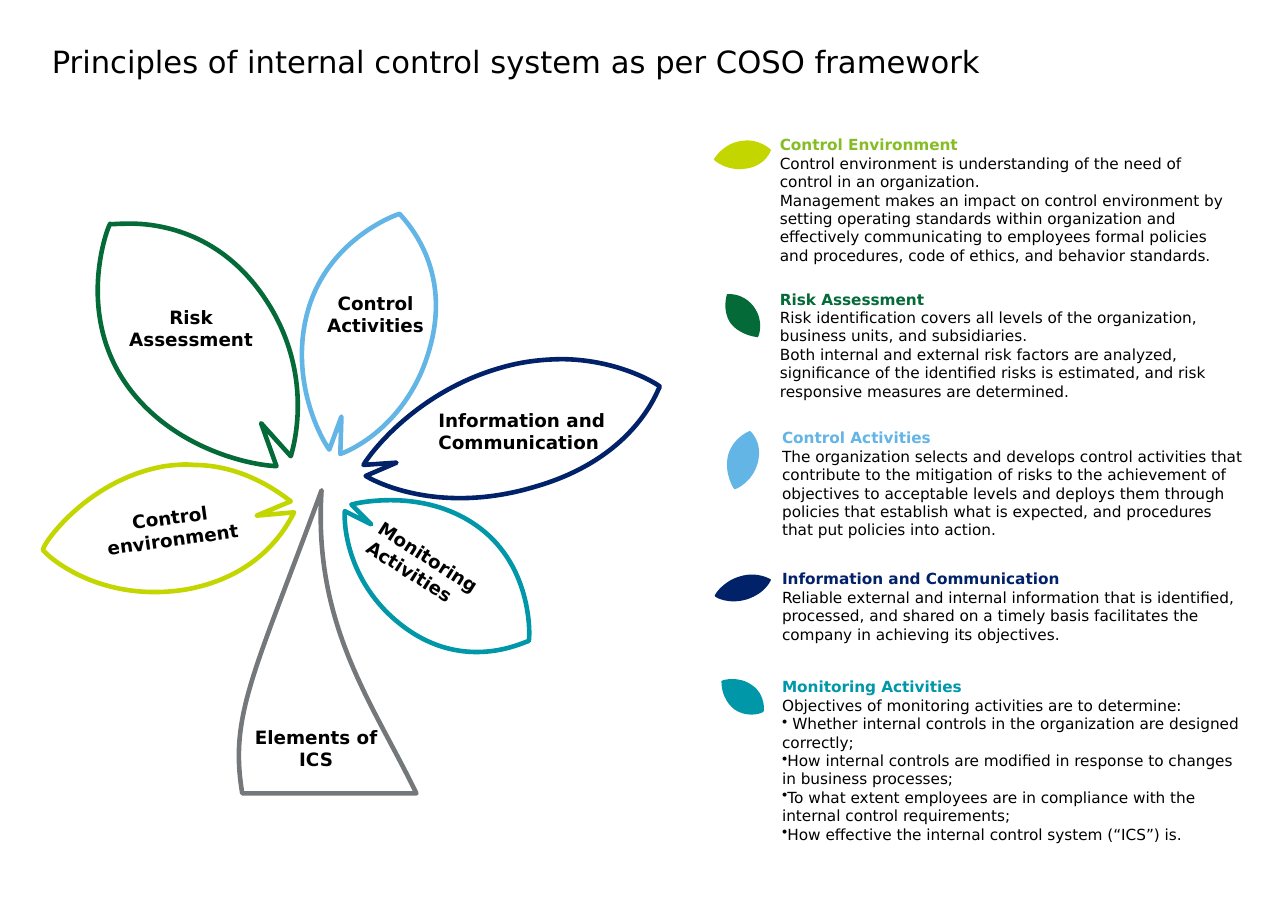
from math import cos, radians, sin

from lxml.etree import SubElement
from pptx import Presentation
from pptx.dml.color import RGBColor
from pptx.enum.text import MSO_ANCHOR, MSO_AUTO_SIZE, PP_ALIGN
from pptx.oxml.ns import qn
from pptx.util import Cm, Pt

FONT = "DejaVu Sans"
BLACK, GREY = "000000", "75787B"
LIME, GREEN, SKY, NAVY, TEAL = "C4D600", "046A38", "62B5E5", "012169", "0097A9"
TITLE = "Principles of internal control system as per COSO framework"

# Places are in inches: left, top, width, height.
# Heading, heading colour, place, paragraphs, bullets
SECTIONS = [
    ("Control Environment", "86BC25", (7.08, 1.23, 4.1, 1.18), [
        "Control environment is understanding of the need of control in an organization.",
        "Management makes an impact on control environment by setting operating standards "
        "within organization and effectively communicating to employees formal policies and "
        "procedures, code of ethics, and behavior standards."], []),
    ("Risk Assessment", GREEN, (7.08, 2.63, 4.19, 1.18), [
        "Risk identification covers all levels of the organization, business units, and "
        "subsidiaries.",
        "Both internal and external risk factors are analyzed, significance of the identified "
        "risks is estimated, and risk responsive measures are determined."], []),
    ("Control Activities", SKY, (7.1, 3.89, 4.19, 1.01), [
        "The organization selects and develops control activities that contribute to the "
        "mitigation of risks to the achievement of objectives to acceptable levels and deploys "
        "them through policies that establish what is expected, and procedures that put "
        "policies into action."], []),
    ("Information and Communication", NAVY, (7.1, 5.17, 4.23, 0.84), [
        "Reliable external and internal information that is identified, processed, and shared "
        "on a timely basis facilitates the company in achieving its objectives."], []),
    ("Monitoring Activities", TEAL, (7.1, 6.15, 4.22, 1.51), [
        "Objectives of monitoring activities are to determine:"], [
        " Whether internal controls in the organization are designed correctly;",
        "How internal controls are modified in response to changes in business processes;",
        "To what extent employees are in compliance with the internal control requirements;",
        "How effective the internal control system (“ICS”) is."]),
]

# Colour, place before rotation, rotation, then the outline as it lies on the page:
# start, lines (x, y) and curves (two control points and an end)
ICONS = [
    (LIME, (6.48, 1.28, 0.52, 0.26), 350.2, [
        (6.48, 1.45),
        (6.48, 1.44, 6.57, 1.3, 6.73, 1.28), (6.89, 1.25, 7, 1.36, 7, 1.36),
        (7, 1.36, 6.96, 1.5, 6.78, 1.53), (6.6, 1.56, 6.49, 1.46, 6.48, 1.45)]),
    (GREEN, (6.5, 2.74, 0.48, 0.25), 233.1, [
        (6.88, 3.06),
        (6.88, 3.06, 6.72, 3.05, 6.63, 2.93), (6.55, 2.81, 6.6, 2.67, 6.6, 2.67),
        (6.6, 2.67, 6.74, 2.65, 6.84, 2.78), (6.94, 2.91, 6.89, 3.05, 6.88, 3.06)]),
    (SKY, (6.47, 4.04, 0.55, 0.28), 284.7, [
        (6.67, 4.44),
        (6.66, 4.44, 6.57, 4.29, 6.61, 4.13), (6.66, 3.96, 6.81, 3.91, 6.81, 3.91),
        (6.81, 3.91, 6.93, 4.01, 6.88, 4.2), (6.83, 4.38, 6.68, 4.44, 6.67, 4.44)]),
    (NAVY, (6.48, 5.23, 0.53, 0.22), 343.6, [
        (6.49, 5.41),
        (6.48, 5.4, 6.57, 5.27, 6.72, 5.23), (6.88, 5.18, 7, 5.26, 7, 5.26),
        (7, 5.26, 6.96, 5.38, 6.78, 5.44), (6.61, 5.49, 6.49, 5.42, 6.49, 5.41)]),
    (TEAL, (6.5, 6.19, 0.48, 0.27), 35.6, [
        (6.55, 6.18),
        (6.56, 6.17, 6.71, 6.13, 6.83, 6.22), (6.95, 6.3, 6.94, 6.46, 6.93, 6.46),
        (6.94, 6.46, 6.81, 6.53, 6.67, 6.44), (6.54, 6.34, 6.55, 6.19, 6.55, 6.18)]),
]
TREE = [
    (LIME, (0.38, 4.24, 2.31, 1.13), 350.2, [
        (1.76, 4.22), (2.19, 4.22, 2.51, 4.45, 2.64, 4.55), (2.33, 4.68), (2.67, 4.65),
        (2.6, 4.79, 2.36, 5.23, 1.69, 5.35), (0.89, 5.48, 0.41, 5.03, 0.39, 4.99),
        (0.38, 4.95, 0.79, 4.35, 1.5, 4.23), (1.59, 4.22, 1.68, 4.21, 1.76, 4.22)]),
    (GREEN, (0.45, 2.37, 2.67, 1.47), 233.1, [
        (1.13, 2.03),
        (1.37, 2.02, 1.93, 2.07, 2.35, 2.63), (2.82, 3.26, 2.71, 3.91, 2.64, 4.14),
        (2.37, 3.84), (2.51, 4.23), (2.26, 4.22, 1.58, 4.07, 1.17, 3.52),
        (0.67, 2.85, 0.98, 2.05, 1, 2.03), (0.99, 2.04, 1.04, 2.03, 1.13, 2.03)]),
    (SKY, (2.22, 2.44, 2.24, 1.16), 284.7, [
        (3.63, 1.94),
        (3.62, 1.95, 4.11, 2.37, 3.91, 3.13), (3.74, 3.79, 3.26, 4.06, 3.09, 4.12),
        (3.1, 3.78), (2.99, 4.08), (2.87, 3.91, 2.64, 3.4, 2.79, 2.84),
        (2.97, 2.16, 3.62, 1.94, 3.63, 1.94)]),
    (NAVY, (3.25, 3.33, 2.79, 1.13), 343.6, [
        (5.12, 3.26),
        (5.64, 3.27, 5.99, 3.5, 5.99, 3.51), (5.98, 3.5, 5.8, 4.15, 4.85, 4.42),
        (4.04, 4.66, 3.47, 4.41, 3.32, 4.32), (3.6, 4.2), (3.3, 4.22),
        (3.41, 4.04, 3.84, 3.54, 4.54, 3.34), (4.74, 3.28, 4.94, 3.26, 5.12, 3.26)]),
    (TEAL, (2.95, 4.65, 2.05, 1.13), 35.6, [
        (3.55, 4.54),
        (3.78, 4.54, 4.08, 4.59, 4.34, 4.78), (4.85, 5.15, 4.81, 5.81, 4.8, 5.82),
        (4.8, 5.8, 4.26, 6.12, 3.68, 5.7), (3.16, 5.32, 3.12, 4.78, 3.13, 4.64),
        (3.37, 4.76), (3.19, 4.58), (3.26, 4.56, 3.39, 4.54, 3.55, 4.54)]),
    (GREY, (2.08, 4.45, 1.7, 2.74), 0, [
        (2.92, 4.45), (2.31, 6.11, 2.08, 6.49, 2.2, 7.2),
        (3.78, 7.2, 3.78, 7.2, 3.78, 7.2), (3.39, 6.39, 2.84, 5.68, 2.92, 4.45)]),
]
# Text, place, rotation, alignment
LABELS = [
    ("Elements of ICS", (2.17, 6.59, 1.4, 0.4), 0, PP_ALIGN.CENTER),
    ("Control environment", (0.78, 4.59, 1.55, 0.41), 352.1, PP_ALIGN.CENTER),
    ("Risk Assessment", (1.07, 2.78, 1.33, 0.4), 0, PP_ALIGN.CENTER),
    ("Control Activities", (2.86, 2.65, 1.1, 0.4), 0, PP_ALIGN.CENTER),
    ("Information and Communication", (3.98, 3.71, 1.55, 0.4), 0, PP_ALIGN.LEFT),
    ("Monitoring Activities", (3.28, 5.08, 1.55, 0.4), 32.4, PP_ALIGN.LEFT),
]


def inches(*values):
    return [Cm(value * 2.54) for value in values]


def color(value):
    return RGBColor.from_string(value)


def prepare_frame(box, anchor=MSO_ANCHOR.TOP, fit=MSO_AUTO_SIZE.SHAPE_TO_FIT_TEXT):
    """Wrap the text of a box, without margins."""
    frame = box.text_frame
    frame.word_wrap = True
    frame.auto_size = fit
    frame.vertical_anchor = anchor
    frame.margin_left = frame.margin_top = frame.margin_right = frame.margin_bottom = 0
    return frame


def write(para, text, size=10, fill=BLACK, bold=False, align=PP_ALIGN.LEFT, bullet=False):
    para.alignment = align
    if bullet:
        SubElement(para._p.get_or_add_pPr(), qn("a:buChar"), char="•")
    span = para.add_run()
    span.text = text
    span.font.name, span.font.size, span.font.bold = FONT, Pt(size), bold
    span.font.color.rgb = color(fill)


def unrotate(x, y, place, rotation):
    """Turn a page point back into the unrotated frame of its shape, from its top left."""
    left, top, width, height = place
    dx, dy = x - left - width / 2, y - top - height / 2
    angle = radians(rotation)
    return inches(width / 2 + dx * cos(angle) + dy * sin(angle),
                  height / 2 - dx * sin(angle) + dy * cos(angle))


def draw_outline(shapes, place, rotation, segments, fill=None, line=None):
    local = [[unrotate(x, y, place, rotation) for x, y in zip(segment[::2], segment[1::2])]
             for segment in segments]
    builder = shapes.build_freeform(*local[0][-1])
    builder.add_line_segments([points[-1] for points in local[1:]], close=True)
    shape = builder.convert_to_shape()
    shape.left, shape.top, shape.width, shape.height = inches(*place)
    shape.rotation = rotation

    outline = next(shape._element.iter(qn("a:path")))
    outline.set("w", str(shape.width))
    outline.set("h", str(shape.height))
    for step, points in zip(list(outline), local):
        for old_point in list(step):
            step.remove(old_point)
        if len(points) == 3:
            curve = outline.makeelement(qn("a:cubicBezTo"))
            outline.replace(step, curve)
            step = curve
        for x, y in points:
            SubElement(step, qn("a:pt"), x=str(x), y=str(y))

    shape.shadow.inherit = False
    if fill:
        shape.fill.solid()
        shape.fill.fore_color.rgb = color(fill)
    else:
        shape.fill.background()
    if line:
        shape.line.color.rgb = color(line)
        shape.line.width = Pt(3)
        SubElement(shape._element.spPr.find(qn("a:ln")), qn("a:round"))
    else:
        shape.line.fill.background()


def main():
    deck = Presentation()
    deck.slide_width, deck.slide_height = Cm(29.7), Cm(21)
    page = deck.slides.add_slide(deck.slide_layouts[5])

    title = page.shapes.title
    title.left, title.top, title.width, title.height = inches(0.47, 0.39, 10.74, 0.4)
    write(prepare_frame(title, fit=MSO_AUTO_SIZE.NONE).paragraphs[0], TITLE, size=20)

    for section, icon in zip(SECTIONS, ICONS):
        heading, heading_color, place, paragraphs, bullets = section
        frame = prepare_frame(page.shapes.add_textbox(*inches(*place)))
        para = frame.paragraphs[0]
        write(para, heading, fill=heading_color, bold=True)
        if heading == "Control Environment":
            para = frame.add_paragraph()
        else:
            para.add_line_break()
        write(para, paragraphs[0])
        for text in paragraphs[1:]:
            write(frame.add_paragraph(), text)
        for text in bullets:
            write(frame.add_paragraph(), text, bullet=True)
        icon_color, *geometry = icon
        draw_outline(page.shapes, *geometry, fill=icon_color)

    tree = page.shapes.add_group_shape()
    for line_color, *geometry in TREE:
        draw_outline(tree.shapes, *geometry, line=line_color)
    for text, place, rotation, align in LABELS:
        box = tree.shapes.add_textbox(*inches(*place))
        box.rotation = rotation
        frame = prepare_frame(box, MSO_ANCHOR.MIDDLE)
        write(frame.paragraphs[0], text, size=12, bold=True, align=align)

    deck.save("out.pptx")


if __name__ == "__main__":
    main()
